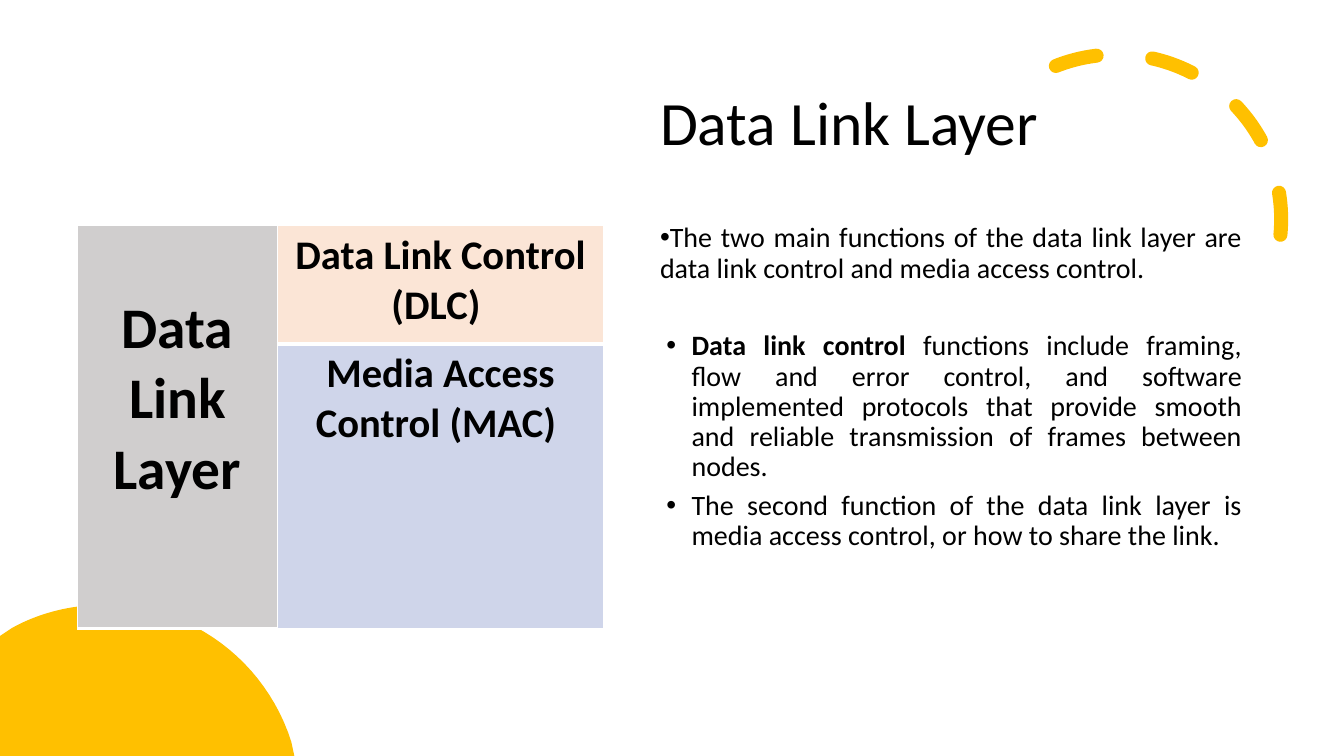
from dataclasses import dataclass

from lxml.etree import SubElement
from pptx import Presentation
from pptx.dml.color import RGBColor
from pptx.enum.dml import MSO_LINE_DASH_STYLE as Dash
from pptx.enum.shapes import MSO_SHAPE as Shape
from pptx.enum.text import MSO_ANCHOR as Anchor, PP_ALIGN as Align
from pptx.oxml.ns import qn
from pptx.util import Pt

COLORS = {
    "background": "FFFFFF",
    "text": "000000",
    "accent": "FFC000",
    "layer": "D0CECE",
    "dlc": "FBE5D6",
    "mac": "CFD5EA",
    "border": "FFFFFF",
}
FONT = "Calibri"


@dataclass
class Span:
    text: str
    bold: bool = False


@dataclass
class Point:
    spans: list[Span]
    margin: float = 22.5
    after: float = 6


@dataclass
class LayerCell:
    row: int
    col: int
    text: str
    size: float
    fill: str
    top_inset: float = 3.6
    top_border: float = 1
    bottom_border: float = 3


POINTS = [
    Point([Span("The two main functions of the data link layer are data link "
                "control and media access control.")], margin=0, after=34),
    Point([Span("Data link control ", True),
           Span("functions include framing, flow and error control, and software "
                "implemented protocols that provide smooth and reliable "
                "transmission of frames between nodes.")]),
    Point([Span("The second function of the data link layer is media access "
                "control, or how to share the link.")]),
]

LAYER_CELLS = [
    LayerCell(0, 0, "Data Link Layer", 41, "layer", top_inset=48.7),
    LayerCell(0, 1, "Data Link Control (DLC) ", 29, "dlc"),
    LayerCell(1, 1, "Media Access Control (MAC) ", 29, "mac",
              top_border=3, bottom_border=1),
]
COLUMN_WIDTHS = [142.56, 233.5]
ROW_HEIGHTS = [84.6, 203]

# Outline of the corner disc: each curve is start, two handles, end
DISC_CURVES = [
    [(208.08, 529.92), (190.08, 473.04), (137.52, 432), (74.88, 432)],
    [(74.88, 432), (51.12, 432), (28.08, 437.76), (8.64, 448.56)],
]
DISC_EDGE = [(0, 454.32), (0, 540), (210.24, 540)]


def rgb(name: str) -> RGBColor:
    return RGBColor.from_string(COLORS[name])


def add_span(paragraph, span: Span, size: float) -> None:
    run = paragraph.add_run()
    run.text = span.text
    run.font.name = FONT
    run.font.size = Pt(size)
    run.font.bold = span.bold
    run.font.color.rgb = rgb("text")


def add_text_frame(slide, top: float, height: float):
    frame = slide.shapes.add_textbox(
        Pt(464.4), Pt(top), Pt(429.84), Pt(height)).text_frame
    frame.word_wrap = True
    return frame


def add_point(paragraph, point: Point) -> None:
    paragraph.alignment = Align.JUSTIFY
    paragraph.line_spacing = 0.9
    paragraph.space_after = Pt(point.after)
    props = paragraph._p.get_or_add_pPr()
    props.set("marL", str(Pt(point.margin)))
    props.set("indent", str(Pt(-18)))
    SubElement(props, qn("a:buFont"), typeface="Arial")
    SubElement(props, qn("a:buChar"), char="•")
    for span in point.spans:
        add_span(paragraph, span, 20)


def curve_points(curve: list, steps: int = 24) -> list:
    def at(t: float, axis: int) -> int:
        weights = ((1 - t) ** 3, 3 * t * (1 - t) ** 2, 3 * t * t * (1 - t), t ** 3)
        return Pt(sum(w * p[axis] for w, p in zip(weights, curve)))
    return [(at(i / steps, 0), at(i / steps, 1)) for i in range(steps + 1)]


def set_borders(cell, top: float, bottom: float) -> None:
    props = cell._tc.get_or_add_tcPr()
    sides = {"lnL": 1, "lnR": 1, "lnT": top, "lnB": bottom}
    for index, (side, width) in enumerate(sides.items()):
        line = SubElement(props, qn(f"a:{side}"), w=str(Pt(width)))
        fill = SubElement(line, qn("a:solidFill"))
        SubElement(fill, qn("a:srgbClr"), val=COLORS["border"])
        props.insert(index, line)


def fill_cell(table, item: LayerCell) -> None:
    cell = table.cell(item.row, item.col)
    cell.fill.solid()
    cell.fill.fore_color.rgb = rgb(item.fill)
    cell.margin_left = cell.margin_right = Pt(7.2)
    cell.margin_top, cell.margin_bottom = Pt(item.top_inset), Pt(3.6)
    set_borders(cell, item.top_border, item.bottom_border)
    paragraph = cell.text_frame.paragraphs[0]
    paragraph.alignment = Align.CENTER
    add_span(paragraph, Span(item.text, True), item.size)


def main() -> None:
    deck = Presentation()
    deck.slide_width, deck.slide_height = Pt(960), Pt(540)
    slide = deck.slides.add_slide(deck.slide_layouts[6])
    slide.background.fill.solid()
    slide.background.fill.fore_color.rgb = rgb("background")

    # Dashed arc, starting at 240.7 degrees (in units of 100000 / 60000)
    arc = slide.shapes.add_shape(
        Shape.ARC, Pt(679.68), Pt(38.88), Pt(235.44), Pt(235.44))
    arc.shadow.inherit = False
    arc.adjustments[0] = 144.42
    arc.adjustments[1] = 0
    arc.rotation = 66.1
    arc._element.spPr.xfrm.set("flipH", "1")
    arc.fill.background()
    arc.line.color.rgb = rgb("accent")
    arc.line.width = Pt(10)
    arc.line.dash_style = Dash.DASH
    arc.line._ln.set("cap", "rnd")

    # Title
    title = add_text_frame(slide, 37.44, 104.4)
    title.vertical_anchor = Anchor.MIDDLE
    heading = title.paragraphs[0]
    heading.line_spacing = 0.9
    heading.space_after = Pt(6)
    add_span(heading, Span("Data Link Layer"), 44)

    # Corner disc
    outline = [spot for curve in DISC_CURVES for spot in curve_points(curve)]
    outline += [(Pt(x), Pt(y)) for x, y in DISC_EDGE]
    builder = slide.shapes.build_freeform(*outline[0], scale=1.0)
    builder.add_line_segments(outline[1:], close=True)
    disc = builder.convert_to_shape()
    disc.shadow.inherit = False
    disc.fill.solid()
    disc.fill.fore_color.rgb = rgb("accent")
    disc.line.fill.background()

    # Functions of the layer
    body = add_text_frame(slide, 156.24, 329.76)
    for index, point in enumerate(POINTS):
        add_point(body.add_paragraph() if index else body.paragraphs[0], point)

    # Table of sublayers
    table = slide.shapes.add_table(
        2, 2, Pt(55.44), Pt(161.28),
        Pt(sum(COLUMN_WIDTHS)), Pt(sum(ROW_HEIGHTS))).table
    table.first_row = table.horz_banding = False
    for column, width in zip(table.columns, COLUMN_WIDTHS):
        column.width = Pt(width)
    for row, height in zip(table.rows, ROW_HEIGHTS):
        row.height = Pt(height)
    table.cell(0, 0).merge(table.cell(1, 0))
    for item in LAYER_CELLS:
        fill_cell(table, item)

    deck.save("out.pptx")


if __name__ == "__main__":
    main()
